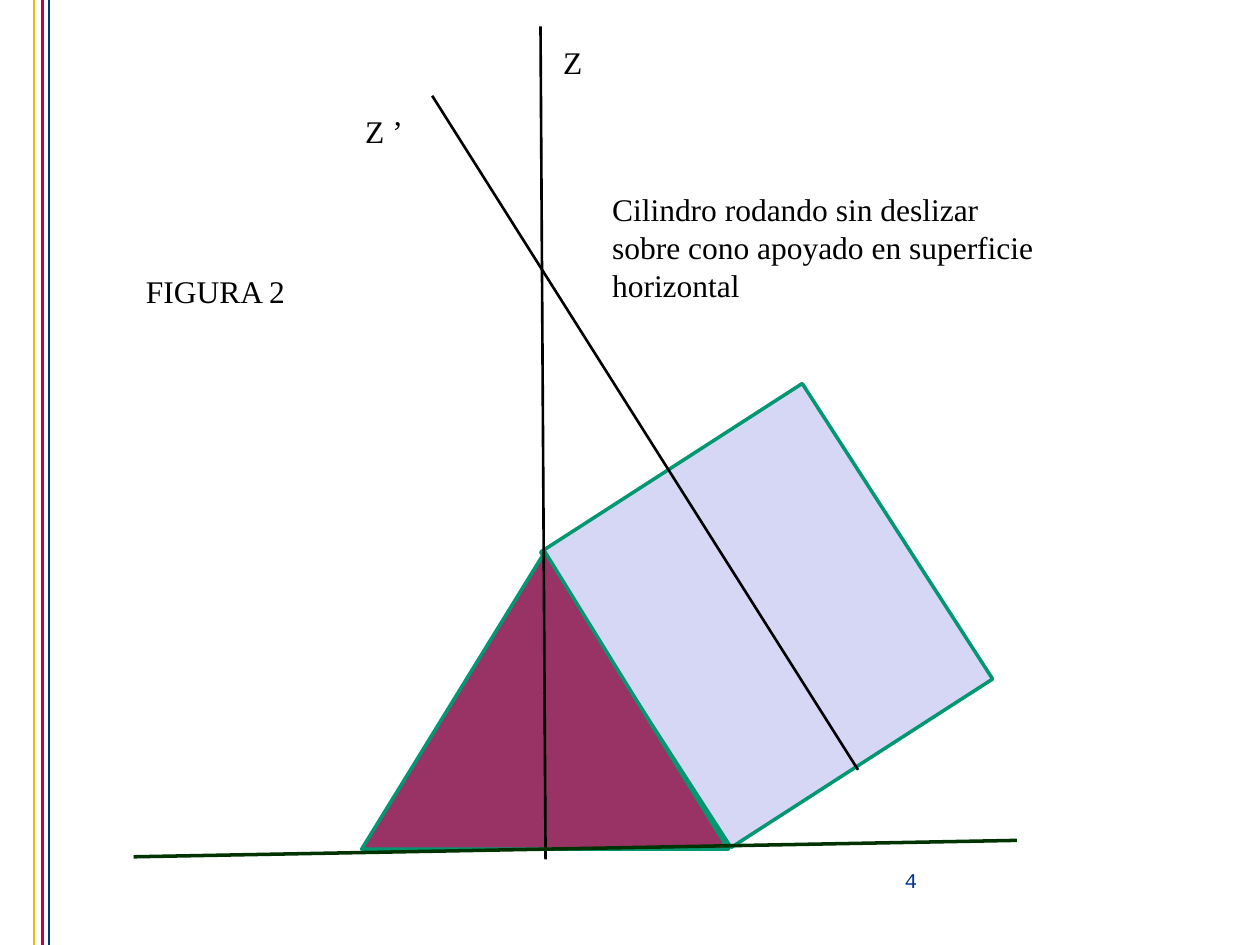
from dataclasses import dataclass

from pptx import Presentation
from pptx.dml.color import RGBColor
from pptx.enum.shapes import MSO_CONNECTOR, MSO_SHAPE
from pptx.enum.text import PP_ALIGN
from pptx.oxml.ns import qn
from pptx.util import Inches, Pt
from lxml import etree

STRAIGHT = MSO_CONNECTOR.STRAIGHT
RECTANGLE, TRIANGLE = MSO_SHAPE.RECTANGLE, MSO_SHAPE.ISOSCELES_TRIANGLE
LEFT, CENTER = PP_ALIGN.LEFT, PP_ALIGN.CENTER

BLACK = RGBColor(0x00, 0x00, 0x00)
YELLOW = RGBColor(0xEB, 0xBD, 0x00)
RED = RGBColor(0xC1, 0x00, 0x3D)
NAVY = RGBColor(0x00, 0x3F, 0x6D)
BLUE = RGBColor(0x00, 0x33, 0x99)
LAVENDER = RGBColor(0xD6, 0xD6, 0xF5)
PLUM = RGBColor(0x99, 0x33, 0x66)
TEAL = RGBColor(0x00, 0x97, 0x71)
DARK_GREEN = RGBColor(0x00, 0x33, 0x00)

COLS, ROWS = 100, 75
CELL = Inches(0.1)


@dataclass(frozen=True)
class Label:
    text: str
    col: float
    row: float
    cols: float
    rows: float = 4
    size: float = 18
    font: str = "Times New Roman"
    color: RGBColor = BLACK
    align: PP_ALIGN = LEFT


@dataclass(frozen=True)
class Line:
    start: tuple[float, float]
    end: tuple[float, float]
    color: RGBColor = BLACK
    width: float = 1.5


@dataclass(frozen=True)
class Solid:
    kind: MSO_SHAPE
    col: float
    row: float
    cols: float
    rows: float
    fill: RGBColor
    rotation: float = 0


def cells(*values: float) -> list[int]:
    """Turn counts of grid cells into lengths."""
    return [round(v * CELL) for v in values]


def draw_label(s, label: Label) -> None:
    box = s.shapes.add_textbox(*cells(label.col, label.row, label.cols, label.rows))
    tf = box.text_frame
    tf.word_wrap = True
    tf.text = label.text
    p = tf.paragraphs[0]
    p.alignment = label.align
    r = p.runs[0]
    r.font.name = label.font
    r.font.size = Pt(label.size)
    r.font.color.rgb = label.color


def draw_line(s, line: Line) -> None:
    c = s.shapes.add_connector(STRAIGHT, *cells(*line.start, *line.end))
    c.line.color.rgb = line.color
    c.line.width = Pt(line.width)
    etree.SubElement(c._element.spPr, qn("a:effectLst"))


def draw_solid(s, solid: Solid) -> None:
    sp = s.shapes.add_shape(
        solid.kind, *cells(solid.col, solid.row, solid.cols, solid.rows))
    sp.rotation = solid.rotation
    sp.shadow.inherit = False
    sp.fill.solid()
    sp.fill.fore_color.rgb = solid.fill
    sp.line.color.rgb = TEAL
    sp.line.width = Pt(2)


PAGE_NUMBER = Label("4", 69.4, 68.4, 5.8, 2.7, 12, "Courier New", BLUE, CENTER)
STRIPES = [Line((col, 0), (col, ROWS), color)
           for col, color in ((2.7, YELLOW), (3.4, RED), (3.9, NAVY))]
CAPTIONS = [
    Label("Z", 43.7, 2.9, 10.2),
    Label("Z ’", 28, 8.4, 10.2),
    Label("Cilindro rodando sin deslizar sobre cono apoyado en superficie horizontal",
          47.6, 14.6, 37, 10.1),
    Label("FIGURA 2", 10.6, 21.1, 18.9),
]
CYLINDER = Solid(RECTANGLE, 48.5, 34.9, 24.7, 27.9, LAVENDER, 327.2)
CYLINDER_AXIS = Line((34.3, 7.6), (68.1, 61.1))
CONE = Solid(TRIANGLE, 28.7, 43.8, 29.1, 23.6, PLUM)
CONE_AXIS = Line((42.9, 2.1), (43.3, 68.2))
GROUND = Line((10.6, 68), (80.7, 66.7), DARK_GREEN, 2)

DRAW = {Label: draw_label, Line: draw_line, Solid: draw_solid}


def main() -> None:
    prs = Presentation()
    prs.slide_width, prs.slide_height = cells(COLS, ROWS)
    s = prs.slides.add_slide(prs.slide_layouts[6])
    for item in (PAGE_NUMBER, *STRIPES, *CAPTIONS, CYLINDER, CYLINDER_AXIS,
                 CONE, CONE_AXIS, GROUND):
        DRAW[type(item)](s, item)
    prs.save("out.pptx")


if __name__ == "__main__":
    main()
